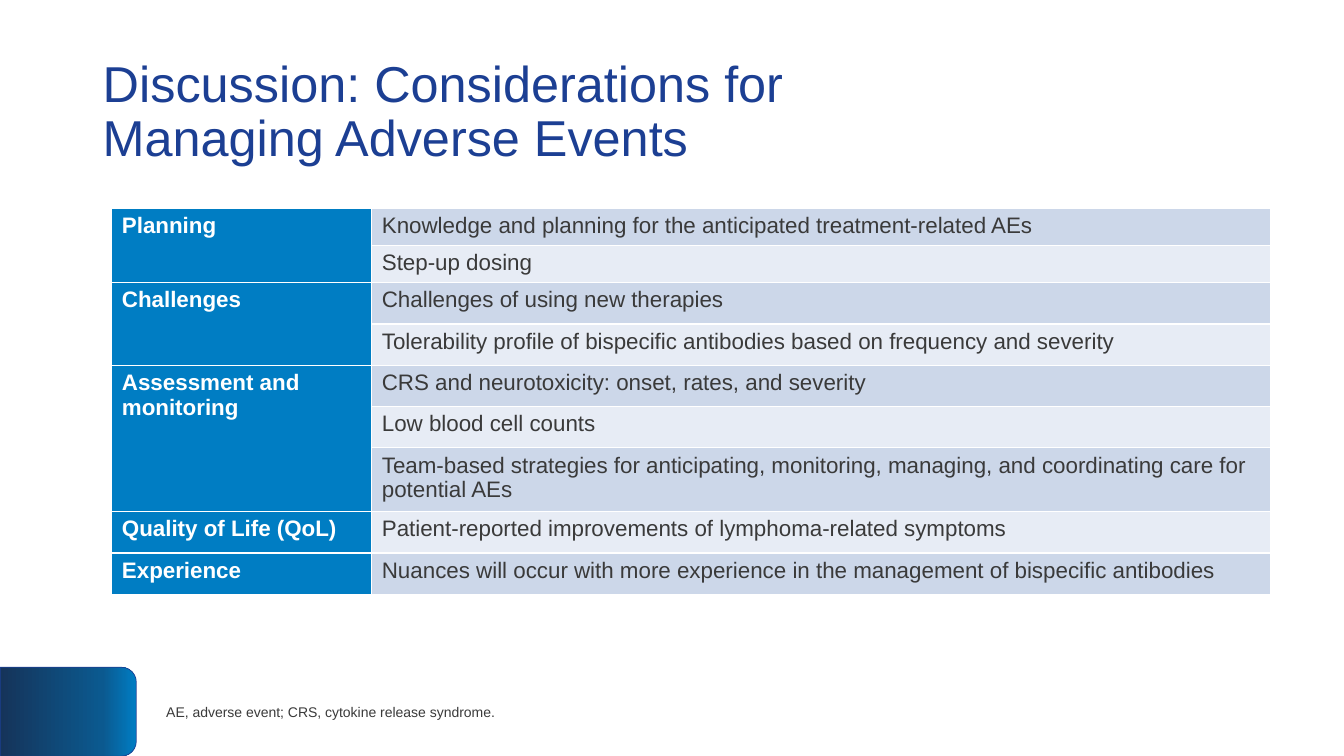
"""Build the adverse event discussion slide."""
from lxml.etree import SubElement
from pptx import Presentation
from pptx.dml.color import RGBColor
from pptx.enum.shapes import MSO_SHAPE
from pptx.enum.text import MSO_ANCHOR
from pptx.oxml import parse_xml
from pptx.oxml.ns import nsdecls, qn
from pptx.util import Cm, Pt

TITLE = ["Discussion: Considerations for", "Managing Adverse Events"]
TOPICS = [
    ("Planning", [
        "Knowledge and planning for the anticipated treatment-related AEs",
        "Step-up dosing",
    ]),
    ("Challenges", [
        "Challenges of using new therapies",
        "Tolerability profile of bispecific antibodies based on frequency and severity",
    ]),
    ("Assessment and monitoring", [
        "CRS and neurotoxicity: onset, rates, and severity",
        "Low blood cell counts",
        "Team-based strategies for anticipating, monitoring, managing, "
        "and coordinating care for potential AEs",
    ]),
    ("Quality of Life (QoL)", [
        "Patient-reported improvements of lymphoma-related symptoms",
    ]),
    ("Experience", [
        "Nuances will occur with more experience in the management of bispecific antibodies",
    ]),
]
FOOTNOTE = "AE, adverse event; CRS, cytokine release syndrome."

COLORS = {
    "title": "1C3F93", "text": "3A3A3A", "white": "FFFFFF", "topic": "007DC3",
    "odd": "CCD7E9", "even": "E7ECF5", "middle": "0B598F", "dark": "15345A",
}
FONT = "Arial"
COLUMN_WIDTHS = [6.55, 22.66]
ROW_HEIGHTS = [0.89] * 2 + [1.04] * 7


def color(name):
    return RGBColor.from_string(COLORS[name])


def add_span(para, text, size, color_name, bold=False):
    span = para.add_run()
    span.text = text
    span.font.name = FONT
    span.font.size = Pt(size)
    span.font.bold = bold
    span.font.color.rgb = color(color_name)


def add_text(page, place, lines, size, color_name, spacing):
    box = page.shapes.add_textbox(*map(Cm, place))
    box.text_frame.word_wrap = True
    box.text_frame.vertical_anchor = MSO_ANCHOR.MIDDLE
    para = box.text_frame.paragraphs[0]
    para.line_spacing = spacing
    for index, line in enumerate(lines):
        if index:
            para.add_line_break()
        add_span(para, line, size, color_name)


def add_corner(page):
    corner = page.shapes.add_shape(
        MSO_SHAPE.ROUND_2_SAME_RECTANGLE, Cm(0.6), Cm(16.22), Cm(2.24), Cm(3.43))
    corner.rotation = 90
    corner.shadow.inherit = False
    corner.line.color.rgb = color("title")
    corner.line.width = Pt(0.5)
    stops = "".join(
        f'<a:gs pos="{percent * 1000}"><a:srgbClr val="{COLORS[name]}"/></a:gs>'
        for percent, name in [(0, "topic"), (25, "middle"), (100, "dark")])
    gradient = parse_xml(
        f'<a:gradFill {nsdecls("a")} rotWithShape="1"><a:gsLst>{stops}</a:gsLst>'
        '<a:lin ang="5400000" scaled="0"/></a:gradFill>')
    corner.element.spPr.find(qn("a:prstGeom")).addnext(gradient)


def style_cell(cell, fill_name):
    properties = cell._tc.get_or_add_tcPr()
    for side in ("a:lnL", "a:lnR", "a:lnT", "a:lnB"):
        border = SubElement(properties, qn(side), w=str(Pt(1)))
        solid = SubElement(border, qn("a:solidFill"))
        SubElement(solid, qn("a:srgbClr"), val=COLORS["white"])
    cell.fill.solid()
    cell.fill.fore_color.rgb = color(fill_name)


def add_topics(page):
    table = page.shapes.add_table(
        len(ROW_HEIGHTS), len(COLUMN_WIDTHS), Cm(2.82), Cm(5.26),
        Cm(sum(COLUMN_WIDTHS)), Cm(sum(ROW_HEIGHTS))).table
    for column, width in zip(table.columns, COLUMN_WIDTHS):
        column.width = Cm(width)
    for row, height in zip(table.rows, ROW_HEIGHTS):
        row.height = Cm(height)
    first = 0
    for topic, points in TOPICS:
        for index, point in enumerate(points, first):
            style_cell(table.cell(index, 0), "topic")
            style_cell(table.cell(index, 1), "even" if index % 2 else "odd")
            add_span(table.cell(index, 1).text_frame.paragraphs[0], point, 16, "text")
        heading = table.cell(first, 0)
        add_span(heading.text_frame.paragraphs[0], topic, 16, "white", True)
        if len(points) > 1:
            heading.merge(table.cell(first + len(points) - 1, 0))
        first += len(points)


def main():
    deck = Presentation()
    deck.slide_width, deck.slide_height = Cm(33.87), Cm(19.05)
    page = deck.slides.add_slide(deck.slide_layouts[6])
    add_corner(page)
    add_text(page, (2.34, 1.02, 29.21, 3.68), TITLE, 36, "title", 0.9)
    add_text(page, (3.94, 16.81, 29.59, 2.24), [FOOTNOTE], 10, "text", 1.0)
    add_topics(page)
    deck.save("out.pptx")


if __name__ == "__main__":
    main()
